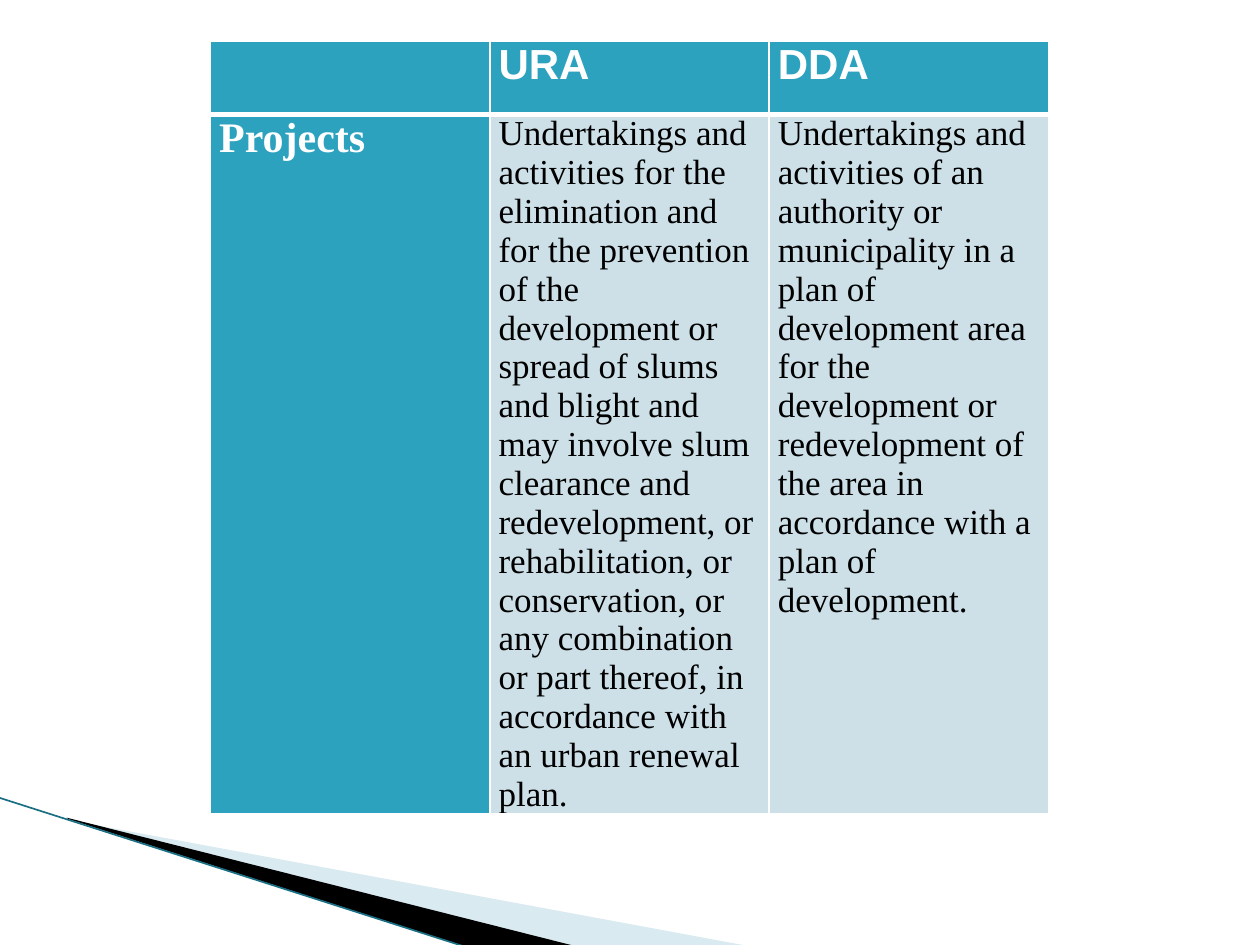
import pptx
import pptx.dml.color
import pptx.enum.shapes
import pptx.oxml
import pptx.oxml.ns
import pptx.util
from lxml import etree

Inches = pptx.util.Inches
Pt = pptx.util.Pt

COLORS = {
    "teal": "2DA2BF",
    "pale": "CDE0E8",
    "wedge": "A0CBDC",
    "edge": "1B6F84",
    "black": "000000",
    "white": "FFFFFF",
}

# Content
ROWS = [
    ["", "URA", "DDA"],
    [
        "Projects",
        "Undertakings and activities for the elimination and for the prevention "
        "of the development or spread of slums and blight and may involve slum "
        "clearance and redevelopment, or rehabilitation, or conservation, or any "
        "combination or part thereof, in accordance with an urban renewal plan.",
        "Undertakings and activities of an authority or municipality in a plan of "
        "development area for the development or redevelopment of the area in "
        "accordance with a plan of development.",
    ],
]
ROW_HEIGHTS = [0.58, 5.54]
COLUMN_WIDTH = 2.217
TABLE_LEFT, TABLE_TOP = 1.67, 0.33

# Corner wedges: points, colour, opacity in percent
WEDGES = [
    ([(0.55, 6.51), (5.95, 7.51), (4.56, 7.51), (0.55, 6.5)], "wedge", 40),
    ([(0.53, 6.49), (4.57, 7.51), (3.72, 7.52), (0.54, 6.5)], "black", 100),
]
EDGE = (-0.01, 6.33, 3.71, 7.52)


def rgb(name):
    return pptx.dml.color.RGBColor.from_string(COLORS[name])


def add_wedge(slide, points, color, opacity):
    corners = [(Inches(x), Inches(y)) for x, y in points]
    builder = slide.shapes.build_freeform(*corners[0], scale=1.0)
    builder.add_line_segments(corners[1:], close=True)
    wedge = builder.convert_to_shape()
    wedge.shadow.inherit = False
    wedge.line.fill.background()
    wedge.fill.solid()
    wedge.fill.fore_color.rgb = rgb(color)
    if opacity < 100:
        tint = wedge.fill._xPr.find(".//" + pptx.oxml.ns.qn("a:srgbClr"))
        etree.SubElement(tint, pptx.oxml.ns.qn("a:alpha"), val=str(opacity * 1000))


def add_borders(cell, widths):
    properties = cell._tc.get_or_add_tcPr()
    for side, width in widths.items():
        properties.append(pptx.oxml.parse_xml(
            f'<a:ln{side} {pptx.oxml.ns.nsdecls("a")} w="{Pt(width)}"><a:solidFill>'
            f'<a:srgbClr val="{COLORS["white"]}"/></a:solidFill></a:ln{side}>'))


def fill_cell(cell, text, row, column):
    heading = row == 0 or column == 0
    add_borders(cell, {"L": 1, "R": 1, "T": 3 if row else 1, "B": 1 if row else 3})
    cell.fill.solid()
    cell.fill.fore_color.rgb = rgb("teal" if heading else "pale")
    cell.margin_left = cell.margin_right = Inches(0.07)
    cell.margin_top = cell.margin_bottom = 0
    if text:
        run = cell.text_frame.paragraphs[0].add_run()
        run.text = text
        run.font.name = "Times New Roman" if row else "Arial"
        run.font.size = Pt(24 if heading else 20)
        run.font.bold = heading
        run.font.color.rgb = rgb("white" if heading else "black")


def main():
    deck = pptx.Presentation()
    deck.slide_width, deck.slide_height = Inches(10), Inches(7.5)
    slide = deck.slides.add_slide(deck.slide_layouts[6])

    # Corner decoration
    for points, color, opacity in WEDGES:
        add_wedge(slide, points, color, opacity)
    edge = slide.shapes.add_connector(
        pptx.enum.shapes.MSO_CONNECTOR.STRAIGHT, *map(Inches, EDGE))
    edge.line.color.rgb = rgb("edge")
    edge.line.width = Pt(0.95)
    etree.SubElement(edge._element.spPr, pptx.oxml.ns.qn("a:effectLst"))

    # Comparison table
    comparison = slide.shapes.add_table(
        len(ROWS), len(ROWS[0]), Inches(TABLE_LEFT), Inches(TABLE_TOP),
        Inches(COLUMN_WIDTH * len(ROWS[0])), Inches(sum(ROW_HEIGHTS))).table
    for column in comparison.columns:
        column.width = Inches(COLUMN_WIDTH)
    for row, texts in enumerate(ROWS):
        comparison.rows[row].height = Inches(ROW_HEIGHTS[row])
        for column, text in enumerate(texts):
            fill_cell(comparison.cell(row, column), text, row, column)

    deck.save("out.pptx")


if __name__ == "__main__":
    main()
